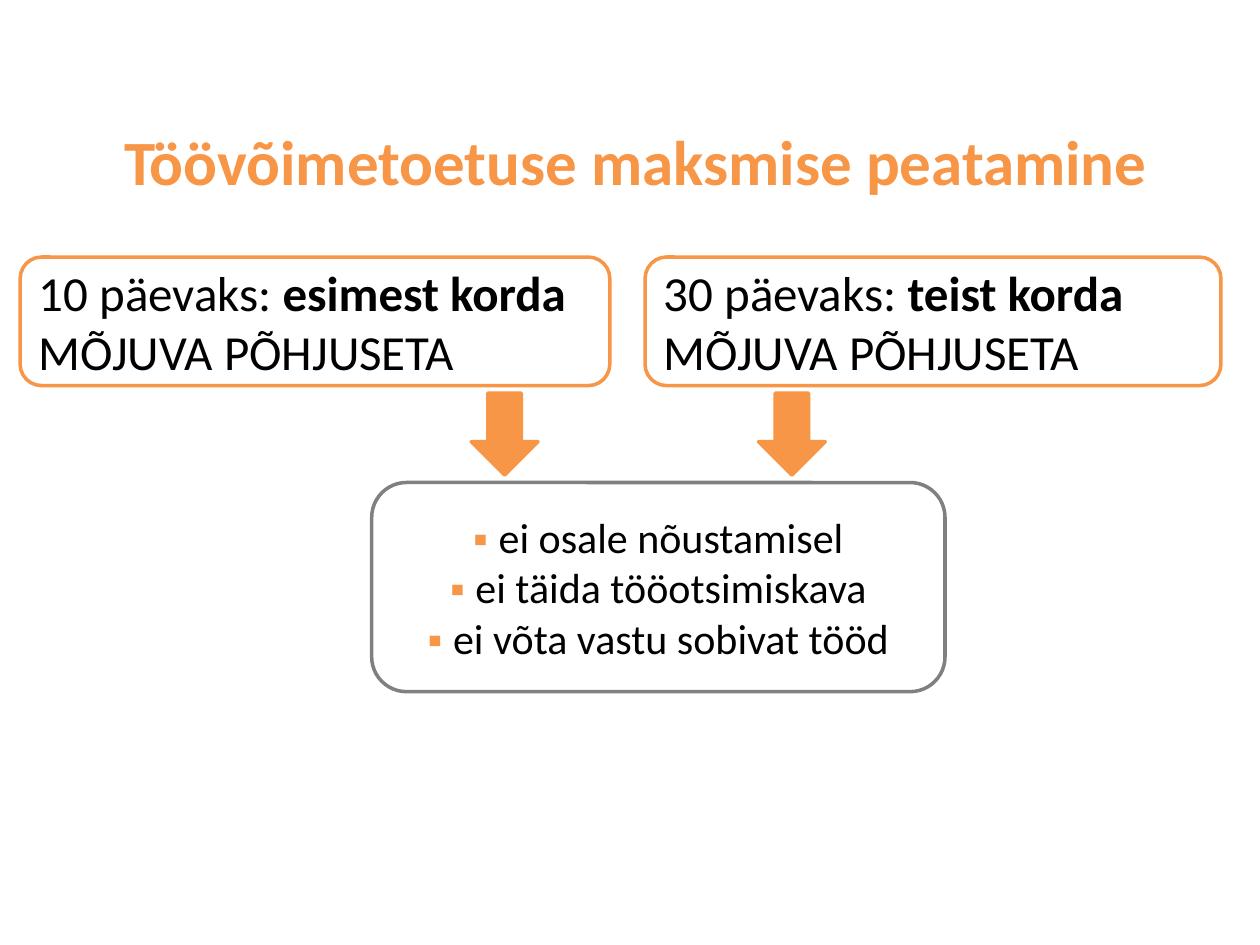
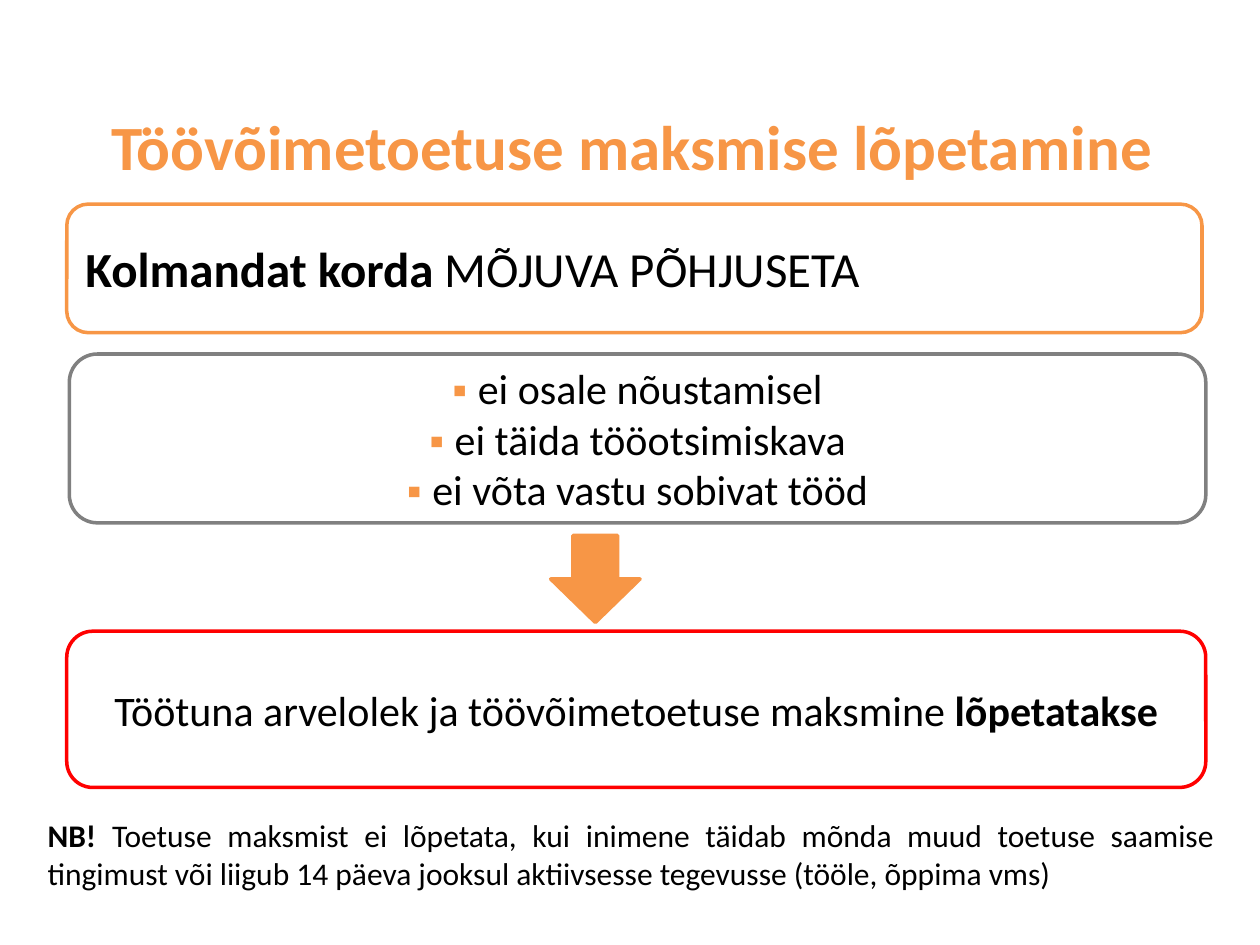
from dataclasses import dataclass

from pptx import Presentation
from pptx.dml.color import RGBColor
from pptx.enum.shapes import MSO_SHAPE
from pptx.enum.text import MSO_ANCHOR, PP_ALIGN
from pptx.util import Inches, Pt


@dataclass(frozen=True)
class Theme:
    orange: str = "F79646"
    grey: str = "808080"
    red: str = "FF0000"
    black: str = "000000"
    white: str = "FFFFFF"
    font: str = "Calibri"
    bullet_font: str = "Times New Roman"
    title_size: int = 36
    heading_size: int = 28
    body_size: int = 24
    note_size: int = 18
    line_width: int = 2


THEME = Theme()
TITLE_ONLY_LAYOUT = 5
REASONS = ("ei osale nõustamisel", "ei täida tööotsimiskava", "ei võta vastu sobivat tööd")


def add_run(paragraph, text, size=THEME.body_size, color=THEME.black, font=THEME.font, bold=False):
    run = paragraph.add_run()
    run.text = text
    run.font.size = Pt(size)
    run.font.name = font
    run.font.bold = bold
    run.font.color.rgb = RGBColor.from_string(color)


def write_phrase(text_frame, *parts, align=PP_ALIGN.LEFT, anchor=MSO_ANCHOR.MIDDLE, **run_format):
    """Write (text, bold) parts as the runs of one paragraph."""
    text_frame.word_wrap = True
    text_frame.vertical_anchor = anchor
    paragraph = text_frame.paragraphs[0]
    paragraph.alignment = align
    for text, bold in parts:
        add_run(paragraph, text, bold=bold, **run_format)


def add_outlined(slide, preset, box, line, fill=THEME.white):
    shape = slide.shapes.add_shape(preset, *map(Inches, box))
    shape.shadow.inherit = False
    shape.fill.solid()
    shape.fill.fore_color.rgb = RGBColor.from_string(fill)
    shape.line.color.rgb = RGBColor.from_string(line)
    shape.line.width = Pt(THEME.line_width)
    return shape


def add_title(slide, box, text):
    title = slide.shapes.title
    title.left, title.top, title.width, title.height = map(Inches, box)
    write_phrase(title.text_frame, (text, True), align=PP_ALIGN.CENTER,
                 size=THEME.title_size, color=THEME.orange)


def add_occasion(slide, box, *parts):
    """Orange box naming which refusal this is."""
    shape = add_outlined(slide, MSO_SHAPE.ROUNDED_RECTANGLE, box, THEME.orange)
    write_phrase(shape.text_frame, *parts, size=THEME.heading_size)


def add_reasons(slide, box):
    shape = add_outlined(slide, MSO_SHAPE.ROUNDED_RECTANGLE, box, THEME.grey)
    text_frame = shape.text_frame
    text_frame.word_wrap = True
    text_frame.vertical_anchor = MSO_ANCHOR.MIDDLE
    for index, reason in enumerate(REASONS):
        paragraph = text_frame.add_paragraph() if index else text_frame.paragraphs[0]
        paragraph.alignment = PP_ALIGN.CENTER
        add_run(paragraph, "▪ ", color=THEME.orange, font=THEME.bullet_font)
        add_run(paragraph, reason)


def add_outcome(slide, box, *parts):
    shape = add_outlined(slide, MSO_SHAPE.ROUNDED_RECTANGLE, box, THEME.red)
    write_phrase(shape.text_frame, *parts, align=PP_ALIGN.CENTER)


def add_down_arrow(slide, box):
    add_outlined(slide, MSO_SHAPE.DOWN_ARROW, box, THEME.orange, fill=THEME.orange)


def add_note(slide, box, *parts):
    note = slide.shapes.add_textbox(*map(Inches, box))
    write_phrase(note.text_frame, *parts, align=PP_ALIGN.JUSTIFY,
                 anchor=MSO_ANCHOR.TOP, size=THEME.note_size)


def build_suspension_slide(presentation):
    slide = presentation.slides.add_slide(presentation.slide_layouts[TITLE_ONLY_LAYOUT])
    add_title(slide, (0.16, 0.92, 9.77, 0.71), "Töövõimetoetuse maksmise peatamine")
    occasions = (
        (0.16, 4.68, 3.74, "10 päevaks: ", "esimest korda "),
        (5.12, 4.57, 6.02, "30 päevaks: ", "teist korda "),
    )
    add_reasons(slide, (2.95, 3.83, 4.55, 1.66))
    for left, width, arrow_left, period, occasion in occasions:
        add_occasion(slide, (left, 2.04, width, 1.02),
                     (period, False), (occasion, True), ("MÕJUVA PÕHJUSETA", False))
        add_down_arrow(slide, (arrow_left, 3.12, 0.53, 0.65))


def build_termination_slide(presentation):
    slide = presentation.slides.add_slide(presentation.slide_layouts[TITLE_ONLY_LAYOUT])
    add_title(slide, (0.13, 0.8, 9.77, 0.71), "Töövõimetoetuse maksmise lõpetamine")
    add_occasion(slide, (0.53, 1.62, 9.01, 1.02),
                 ("Kolmandat korda ", True), ("MÕJUVA PÕHJUSETA", False))
    add_reasons(slide, (0.55, 2.81, 9.02, 1.34))
    add_outcome(slide, (0.53, 5.01, 9.04, 1.24),
                ("Töötuna arvelolek ja töövõimetoetuse maksmine ", False), ("lõpetatakse", True))
    add_note(slide, (0.28, 6.43, 9.46, 0.71), ("NB! ", True),
             ("Toetuse maksmist ei lõpetata, kui inimene täidab mõnda muud toetuse saamise "
              "tingimust või liigub 14 päeva jooksul aktiivsesse tegevusse "
              "(tööle, õppima vms)", False))
    add_down_arrow(slide, (4.37, 4.25, 0.71, 0.69))


def main():
    presentation = Presentation()
    presentation.slide_width = Inches(10)
    presentation.slide_height = Inches(7.5)
    build_suspension_slide(presentation)
    build_termination_slide(presentation)
    presentation.save("out.pptx")


if __name__ == "__main__":
    main()
